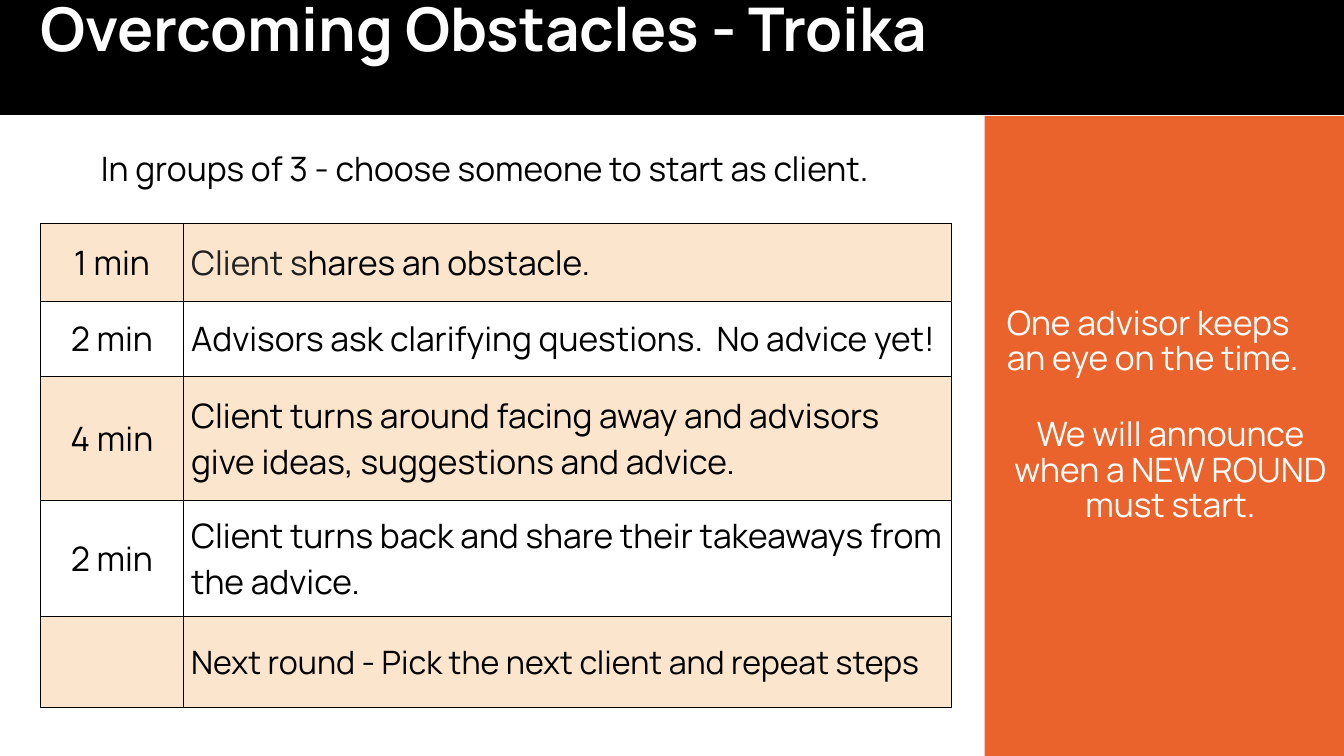
from lxml import etree
from pptx import Presentation
from pptx.dml.color import RGBColor
from pptx.enum import shapes, text
from pptx.oxml.ns import qn
from pptx.util import Pt

# Content
TITLE = "Overcoming Obstacles - Troika"
INTRO = "In groups of 3 - choose someone to start as client."
STEPS = [  # time, runs of (words, colour name), text size name, row height
    ("1 min", [("Client s", "soft_black"), ("hares an obstacle.", "black")], "body", 55.4),
    ("2 min", [("Advisors ask clarifying questions.  No advice yet!", "black")], "body", 54),
    ("4 min", [("Client turns around facing away and advisors give ideas, "
                "suggestions and advice.", "black")], "body", 88.5),
    ("2 min", [("Client turns back and share their takeaways from the advice.",
                "black")], "body", 82.9),
    ("", [("Next round - Pick the next client and repeat steps", "black")], "last_step", 64.8),
]
REMINDERS = [  # words, alignment, space before
    ("One advisor keeps an eye on the time.", "left", 0),
    ("We will announce", "center", 28.8),
    ("when a NEW ROUND must start.", "center", 0),
]

THEME = {
    "font": "Manrope",
    "colors": {"black": "000000", "white": "FFFFFF", "soft_black": "222222",
               "orange": "EA632C", "peach": "FCE5CD"},
    "sizes": {"title": 43, "body": 24, "last_step": 23},
}
ALIGN = {"left": text.PP_ALIGN.LEFT, "center": text.PP_ALIGN.CENTER}

# Layout, in points
SLIDE_W, SLIDE_H = 960, 540
HEADER_H = 82.1
PANEL_LEFT, PANEL_TOP = 703.4, 82.8
TABLE_LEFT, TABLE_TOP = 28.8, 159.8
COLUMNS = (102.2, 548.6)
CELL_INSET = 5.5


def color(name):
    return RGBColor.from_string(THEME["colors"][name])


def write(frame, words, size="body", ink="black", bold=False, align="left",
          spacing=None, before=0):
    """Add a paragraph; words is a string or a list of (words, colour name)."""
    first = frame.paragraphs[0]
    paragraph = frame.add_paragraph() if first.runs else first
    paragraph.alignment = ALIGN[align]
    if spacing:
        paragraph.line_spacing = spacing
    if before:
        paragraph.space_before = Pt(before)
    for part, part_ink in [(words, ink)] if isinstance(words, str) else words:
        run = paragraph.add_run()
        run.text = part
        run.font.name = THEME["font"]
        run.font.size = Pt(THEME["sizes"][size])
        run.font.bold = bold
        run.font.color.rgb = color(part_ink)


def set_insets(frame, left, top, right, bottom):
    frame.word_wrap = True
    frame.margin_left, frame.margin_top = Pt(left), Pt(top)
    frame.margin_right, frame.margin_bottom = Pt(right), Pt(bottom)


def add_block(slide, left, top, width, height, fill):
    block = slide.shapes.add_shape(shapes.MSO_SHAPE.RECTANGLE,
                                   Pt(left), Pt(top), Pt(width), Pt(height))
    block.shadow.inherit = False
    block.fill.solid()
    block.fill.fore_color.rgb = color(fill)
    block.line.fill.background()
    return block.text_frame


def add_label(slide, left, top, width, height, insets):
    frame = slide.shapes.add_textbox(Pt(left), Pt(top), Pt(width), Pt(height)).text_frame
    set_insets(frame, *insets)
    return frame


def outline_cell(cell):
    properties = cell._tc.get_or_add_tcPr()
    for index, side in enumerate(("a:lnL", "a:lnR", "a:lnT", "a:lnB")):
        border = etree.Element(qn(side), w=str(Pt(0.75)))
        solid = etree.SubElement(border, qn("a:solidFill"))
        etree.SubElement(solid, qn("a:srgbClr"), val=THEME["colors"]["black"])
        properties.insert(index, border)


def add_steps(slide):
    table = slide.shapes.add_table(
        len(STEPS), len(COLUMNS), Pt(TABLE_LEFT), Pt(TABLE_TOP),
        Pt(sum(COLUMNS)), Pt(sum(step[-1] for step in STEPS))).table
    table.first_row = table.horz_banding = False
    for column, width in zip(table.columns, COLUMNS):
        column.width = Pt(width)
    for index, (time, action, size, height) in enumerate(STEPS):
        table.rows[index].height = Pt(height)
        time_cell, action_cell = table.rows[index].cells
        for cell in (time_cell, action_cell):
            cell.vertical_anchor = text.MSO_ANCHOR.MIDDLE
            cell.margin_left = cell.margin_right = Pt(CELL_INSET)
            cell.margin_top = cell.margin_bottom = Pt(CELL_INSET)
            if index % 2 == 0:
                cell.fill.solid()
                cell.fill.fore_color.rgb = color("peach")
            else:
                cell.fill.background()
            outline_cell(cell)
        if time:
            write(time_cell.text_frame, time, align="center")
        write(action_cell.text_frame, action, size=size)


def main():
    deck = Presentation()
    deck.slide_width, deck.slide_height = Pt(SLIDE_W), Pt(SLIDE_H)
    slide = deck.slides.add_slide(deck.slide_layouts[6])

    # Header band and introduction
    add_block(slide, 0, 0, SLIDE_W, HEADER_H, "black")
    intro = add_label(slide, 67, 100.8, 574.6, 46, (5, 5, 5, 5))
    write(intro, INTRO)

    # Reminder panel
    panel = add_block(slide, PANEL_LEFT, PANEL_TOP, SLIDE_W - PANEL_LEFT,
                      SLIDE_H - PANEL_TOP, "orange")
    set_insets(panel, 15.8, 3.6, 7.2, 32.4)
    panel.vertical_anchor = text.MSO_ANCHOR.MIDDLE
    for words, align, before in REMINDERS:
        write(panel, words, ink="white", align=align, spacing=0.88, before=before)

    # Timed steps
    add_steps(slide)

    # Title
    title = add_label(slide, 21.6, 0, 781.2, 46, (7.2, 3.6, 7.2, 3.6))
    write(title, TITLE, size="title", ink="white", bold=True, spacing=0.8)

    deck.save("out.pptx")


if __name__ == "__main__":
    main()
